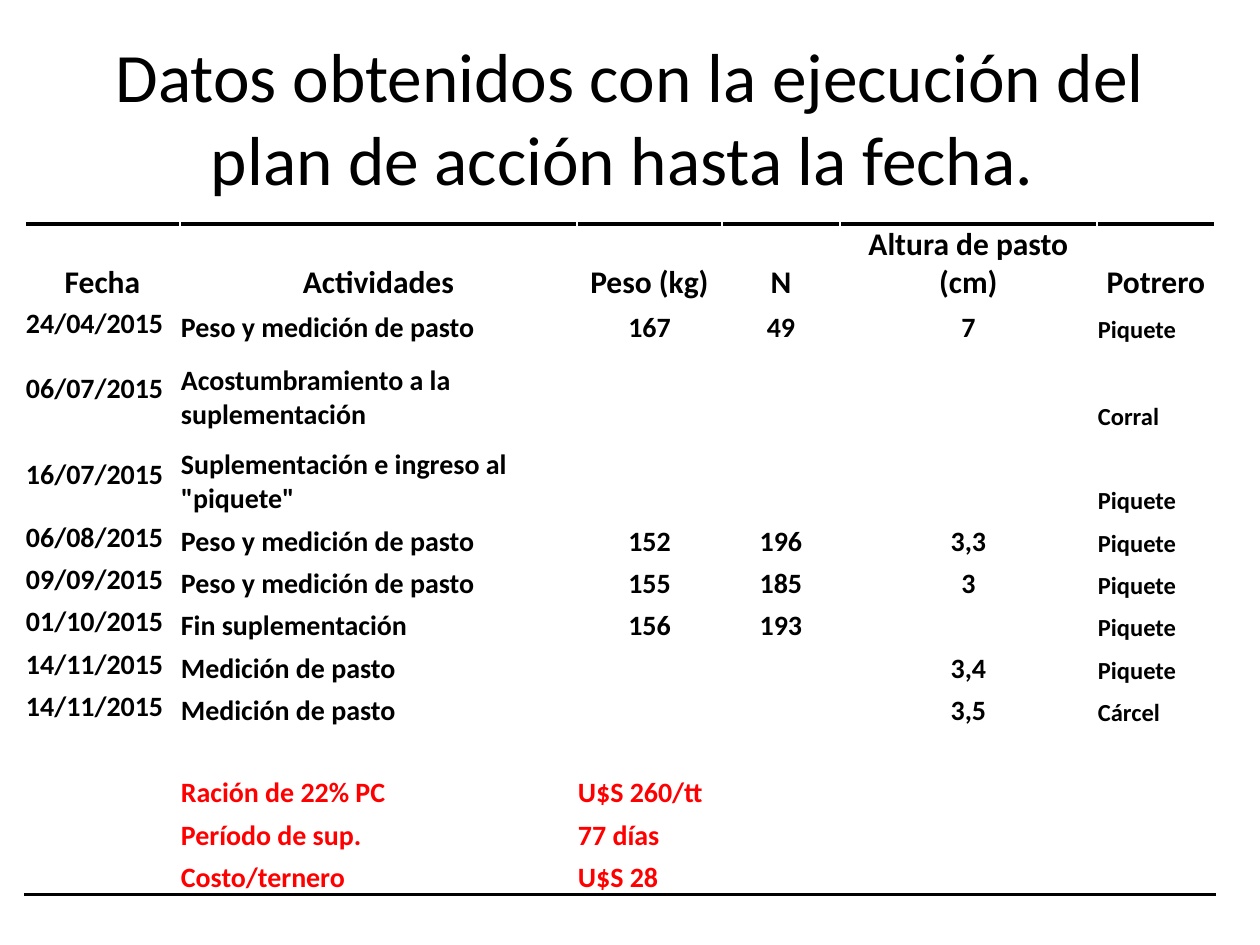
from lxml.etree import fromstring
from pptx import Presentation
from pptx.dml.color import RGBColor
from pptx.enum.text import MSO_ANCHOR, PP_ALIGN
from pptx.util import Pt

PX = 914400 / 126
BLACK = RGBColor(0, 0, 0)
WHITE = RGBColor(255, 255, 255)
RED = RGBColor(255, 0, 0)
NS = "http://schemas.openxmlformats.org/drawingml/2006/main"


def px(n):
    return round(n * PX)


def write(frame, text, size=16, bold=True, color=BLACK, align=PP_ALIGN.LEFT):
    par = frame.paragraphs[0]
    par.alignment = align
    run = par.add_run()
    run.text = text
    font = run.font
    font.name = "Calibri"
    font.size = Pt(size)
    font.bold = bold
    font.color.rgb = color


deck = Presentation()
deck.slide_width, deck.slide_height = px(1260), px(945)
slide = deck.slides.add_slide(deck.slide_layouts[5])

title = slide.shapes.title
title.left, title.top, title.width, title.height = px(63), px(38), px(1134), px(157)
title.text_frame.vertical_anchor = MSO_ANCHOR.MIDDLE
write(title.text_frame, "Datos obtenidos con la ejecución del plan de acción hasta la fecha. ",
      size=39.6, bold=False, align=PP_ALIGN.CENTER)

rows = [
    ["Fecha", "Actividades", "Peso (kg)", "N", "Altura de pasto (cm)", "Potrero"],
    ["24/04/2015", "Peso y medición de pasto", "167", "49", "7", "Piquete"],
    ["06/07/2015", "Acostumbramiento a la suplementación", "", "", "", "Corral"],
    ["16/07/2015", 'Suplementación e ingreso al "piquete"', "", "", "", "Piquete"],
    ["06/08/2015", "Peso y medición de pasto", "152", "196", "3,3", "Piquete"],
    ["09/09/2015", "Peso y medición de pasto", "155", "185", "3", "Piquete"],
    ["01/10/2015", "Fin suplementación", "156", "193", "", "Piquete"],
    ["14/11/2015", "Medición de pasto", "", "", "3,4", "Piquete"],
    ["14/11/2015", "Medición de pasto", "", "", "3,5", "Cárcel"],
    ["", "", "", "", "", ""],
    ["", "Ración de 22% PC", "U$S 260/tt", "", "", ""],
    ["", "Período de sup.", "77 días", "", "", ""],
    ["", "Costo/ternero", "U$S 28", "", "", ""],
]
wide = [155, 397, 145, 118, 257, 118]
high = [78, 43, 87, 84, 43, 42, 42, 43, 42, 40, 42, 43, 42]
last = len(rows) - 1
costs = 10

table = slide.shapes.add_table(len(rows), len(wide), px(25), px(224),
                               px(sum(wide)), px(sum(high))).table
table.first_row = False
table.horz_banding = False
for col, width in zip(table.columns, wide):
    col.width = px(width)

for i, row in enumerate(rows):
    table.rows[i].height = px(high[i])
    for j, text in enumerate(row):
        cell = table.cell(i, j)
        cell.margin_left = cell.margin_right = cell.margin_top = px(1)
        cell.margin_bottom = 0
        cell.fill.solid()
        cell.fill.fore_color.rgb = WHITE
        date = j == 0 and i > 0
        cell.vertical_anchor = MSO_ANCHOR.MIDDLE if date else MSO_ANCHOR.BOTTOM
        if text:
            mid = i == 0 or (i < costs and j in (2, 3, 4))
            write(cell.text_frame, text,
                  size=18 if i == 0 else 14 if j == 5 else 16,
                  color=RED if i >= costs else BLACK,
                  align=PP_ALIGN.CENTER if mid else PP_ALIGN.LEFT)
        if i in (0, last):
            edge = "lnT" if i == 0 else "lnB"
            line = fromstring(
                f'<a:{edge} xmlns:a="{NS}" w="{Pt(2)}"><a:solidFill>'
                f'<a:srgbClr val="{BLACK}"/></a:solidFill></a:{edge}>')
            cell._tc.get_or_add_tcPr().insert(0, line)

deck.save("out.pptx")
